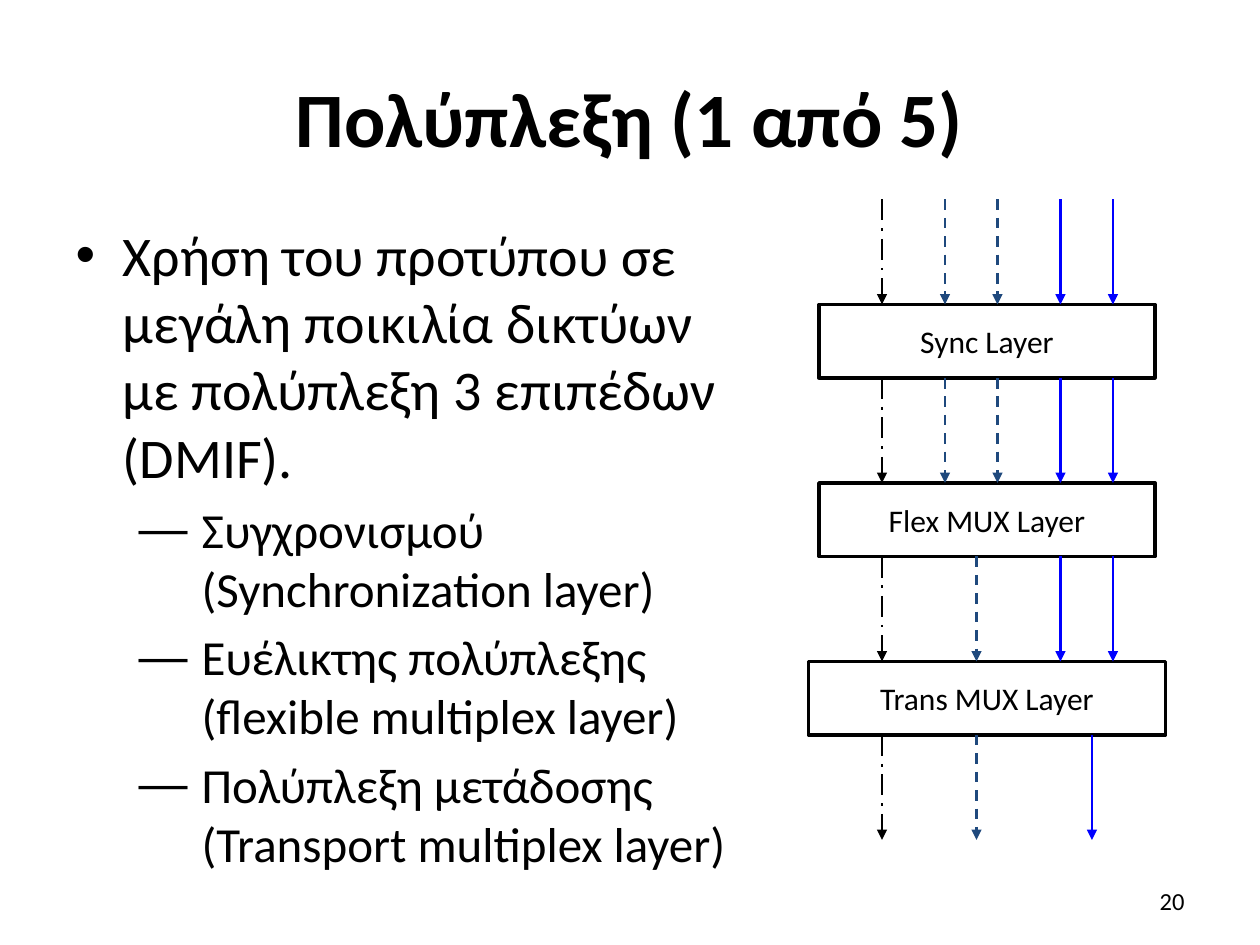
from lxml.etree import SubElement
from pptx import Presentation
from pptx.dml.color import RGBColor
from pptx.enum.dml import MSO_LINE
from pptx.enum.shapes import MSO_CONNECTOR, MSO_SHAPE
from pptx.enum.text import MSO_ANCHOR, MSO_AUTO_SIZE, PP_ALIGN
from pptx.oxml.ns import qn
from pptx.util import Pt

PX = 914400 // 120


def rgb(value):
    return RGBColor.from_string(value)


def style(p, size, align, bold=False):
    p.alignment = align
    for r in p.runs:
        r.font.size = Pt(size)
        r.font.name = "Calibri"
        r.font.bold = bold
        r.font.color.rgb = rgb("000000")


prs = Presentation()
prs.slide_width, prs.slide_height = 1200 * PX, 900 * PX
s = prs.slides.add_slide(prs.slide_layouts[1])

title = s.shapes.title
title.left, title.top, title.width, title.height = 60 * PX, 36 * PX, 1080 * PX, 150 * PX
title.text_frame.text = "Πολύπλεξη (1 από 5)"
title.text_frame.vertical_anchor = MSO_ANCHOR.MIDDLE
style(title.text_frame.paragraphs[0], 44, PP_ALIGN.CENTER, True)

body = s.placeholders[1]
body.left, body.top, body.width, body.height = 60 * PX, 204 * PX, 653 * PX, 642 * PX
tf = body.text_frame
tf.auto_size = MSO_AUTO_SIZE.NONE
items = [
    (0, "Χρήση του προτύπου σε μεγάλη ποικιλία δικτύων με πολύπλεξη 3 επιπέδων (DMIF)."),
    (1, "Συγχρονισμού (Synchronization layer)"),
    (1, "Ευέλικτης πολύπλεξης (flexible multiplex layer)"),
    (1, "Πολύπλεξη μετάδοσης (Transport multiplex layer)"),
]
levels = [(45, 45, "•", 32, 0), (120, 60, "―", 28, 5.6)]
for i, (level, text) in enumerate(items):
    margin, hanging, bullet, size, before = levels[level]
    p = tf.paragraphs[0] if i == 0 else tf.add_paragraph()
    p.text = text
    p.level = level
    p.space_before = Pt(before)
    pPr = p._p.get_or_add_pPr()
    pPr.set("marL", str(margin * PX))
    pPr.set("indent", str(-hanging * PX))
    SubElement(pPr, qn("a:buFont"), typeface="Arial")
    SubElement(pPr, qn("a:buChar"), char=bullet)
    style(p, size, PP_ALIGN.LEFT)

layers = [
    ("Sync Layer", 780, 290, 320),
    ("Flex MUX Layer", 780, 460, 320),
    ("Trans MUX Layer", 770, 630, 340),
]
for text, x, y, w in layers:
    sp = s.shapes.add_shape(MSO_SHAPE.RECTANGLE, x * PX, y * PX, w * PX, 70 * PX)
    sp.shadow.inherit = False
    sp.fill.solid()
    sp.fill.fore_color.rgb = rgb("FFFFFF")
    sp.line.color.rgb = rgb("000000")
    sp.line.width = Pt(2)
    tf = sp.text_frame
    tf.word_wrap = False
    tf.vertical_anchor = MSO_ANCHOR.MIDDLE
    tf.text = text
    style(tf.paragraphs[0], 18, PP_ALIGN.CENTER)

streams = [
    ("000000", MSO_LINE.LONG_DASH_DOT, [[840], [840], [840], [840]]),
    ("1F497D", MSO_LINE.DASH, [[900, 950], [900, 950], [930], [930]]),
    ("0000FF", MSO_LINE.SOLID, [[1010, 1060], [1010, 1060], [1010, 1060], [1040]]),
]
for color, dash, rows in streams:
    for row, xs in enumerate(rows):
        y = 190 + 170 * row
        for x in xs:
            c = s.shapes.add_connector(
                MSO_CONNECTOR.STRAIGHT, x * PX, y * PX, x * PX, (y + 100) * PX)
            c.line.color.rgb = rgb(color)
            c.line.width = Pt(1.5)
            c.line.dash_style = dash
            SubElement(c.line._get_or_add_ln(), qn("a:tailEnd"), type="triangle")
            SubElement(c._element.spPr, qn("a:effectLst"))

number = s.shapes.add_textbox(860 * PX, 834 * PX, 280 * PX, 48 * PX)
tf = number.text_frame
tf.word_wrap = True
tf.vertical_anchor = MSO_ANCHOR.MIDDLE
tf.text = "20"
style(tf.paragraphs[0], 14, PP_ALIGN.RIGHT)

prs.save("out.pptx")
